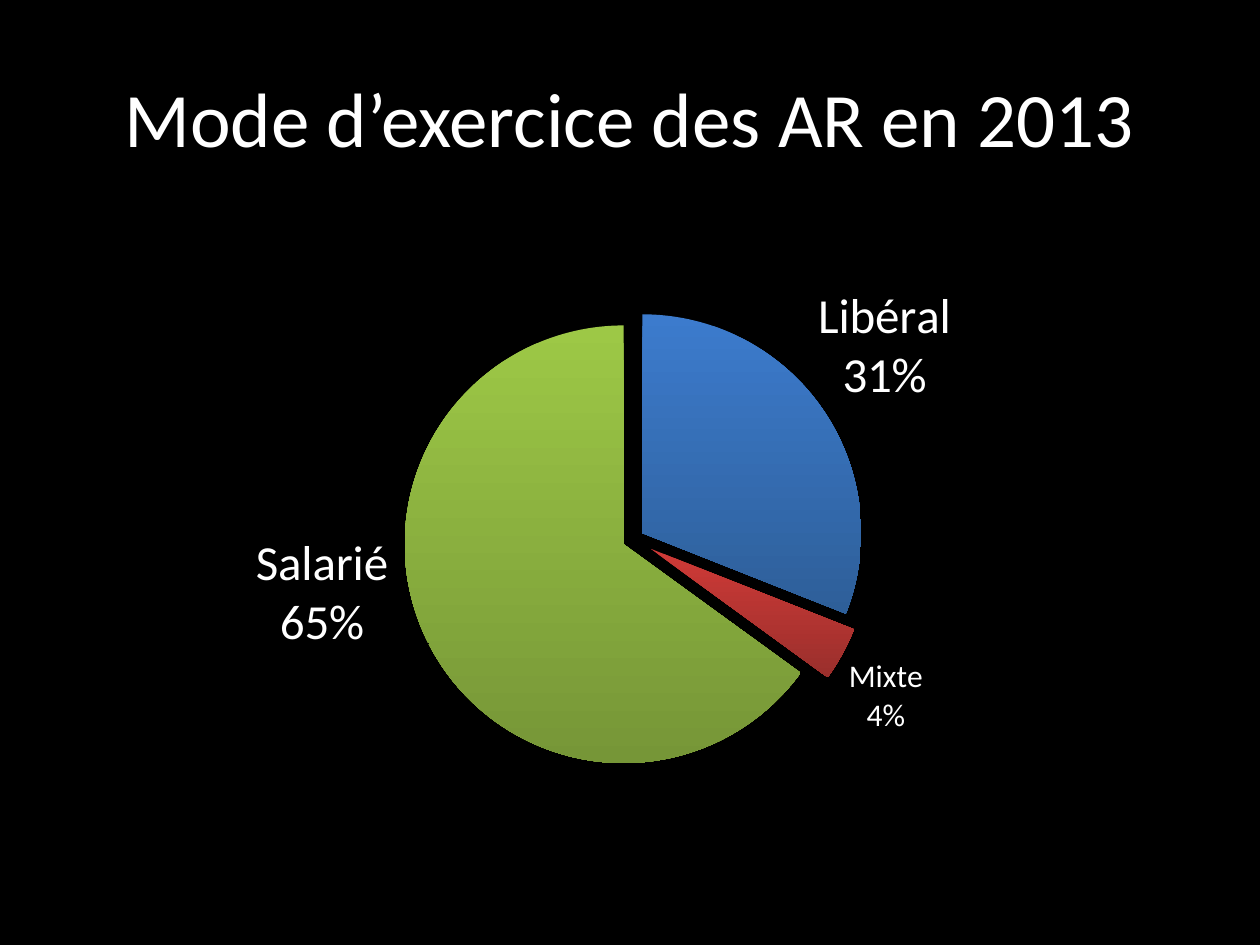
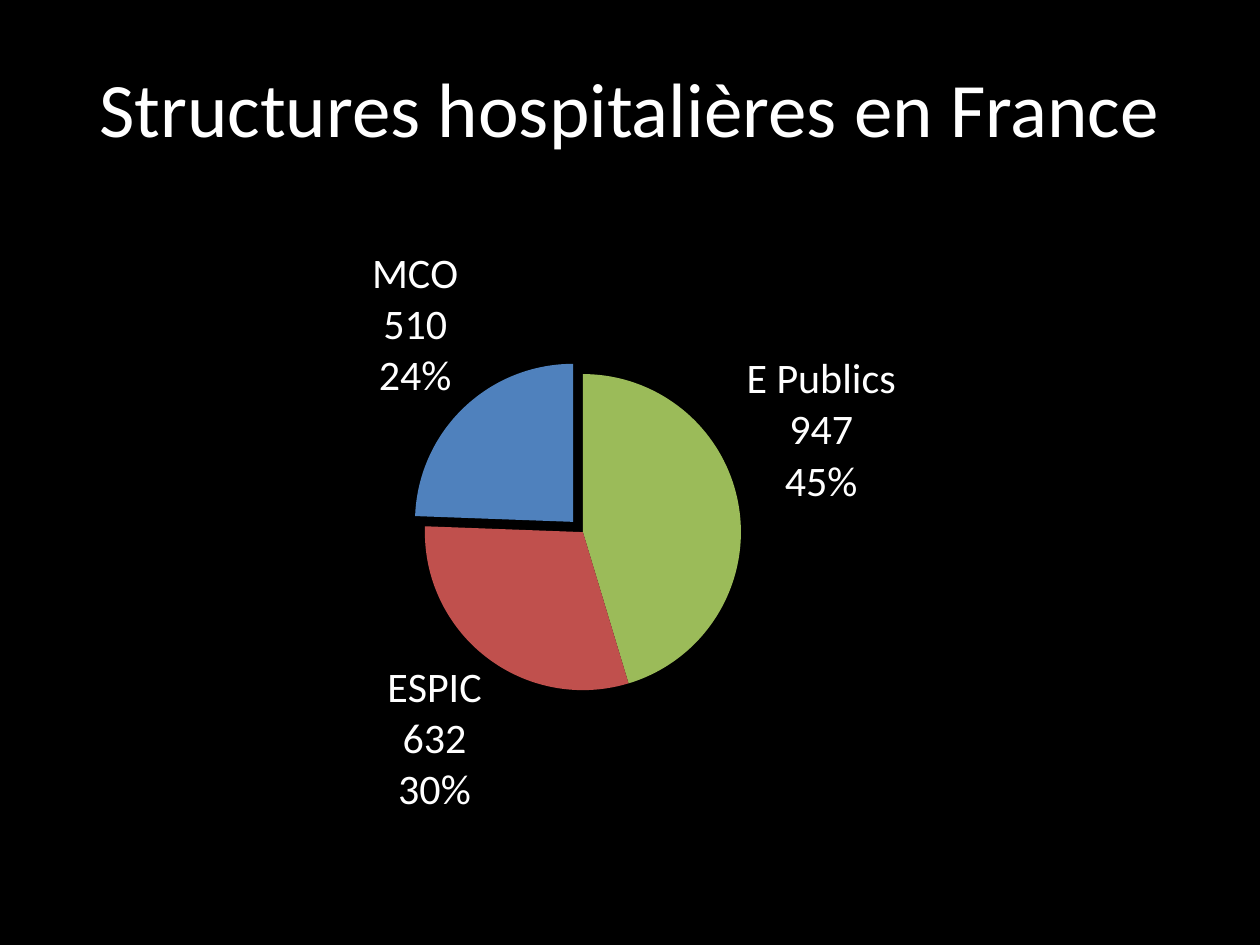
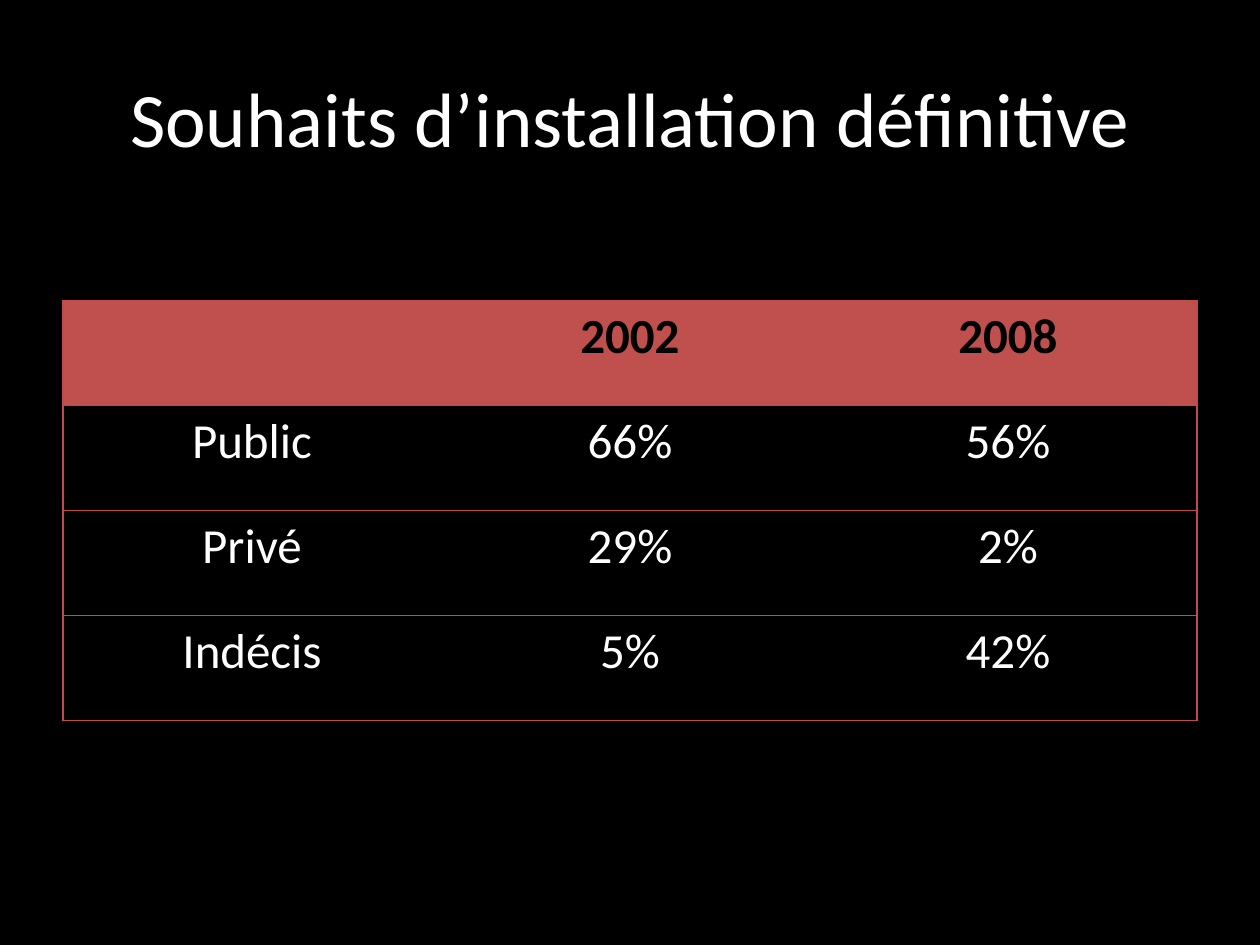
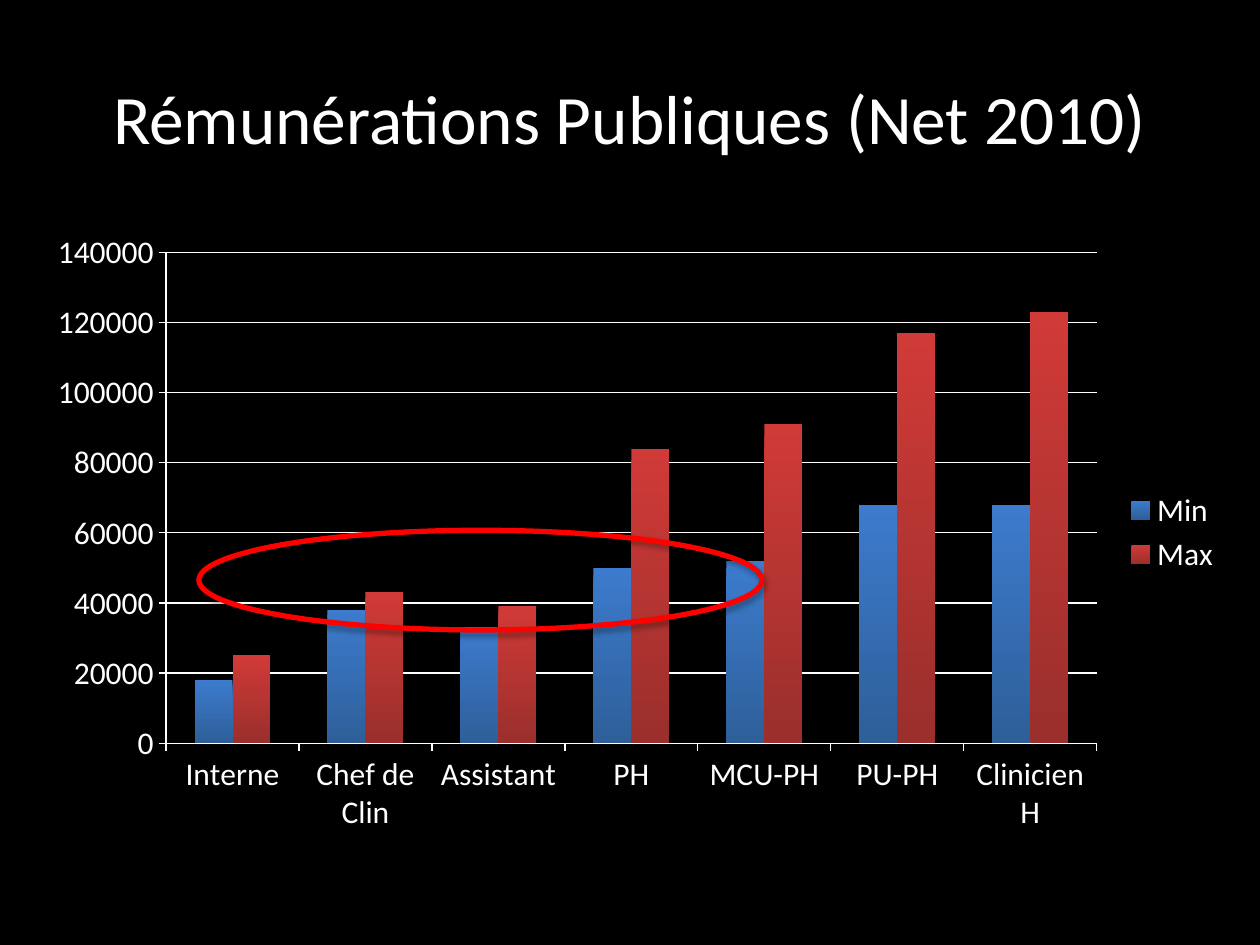
from dataclasses import dataclass
from typing import Any, Optional

from pptx import Presentation
from pptx.chart.data import CategoryChartData
from pptx.dml.color import RGBColor
from pptx.enum.chart import XL_CHART_TYPE, XL_LABEL_POSITION, XL_LEGEND_POSITION, XL_TICK_MARK
from pptx.enum.shapes import MSO_SHAPE
from pptx.enum.text import MSO_ANCHOR, MSO_AUTO_SIZE, PP_ALIGN
from pptx.oxml import parse_xml
from pptx.oxml.ns import nsdecls, qn
from pptx.util import Cm, Pt

PIE, COLUMNS = XL_CHART_TYPE.PIE, XL_CHART_TYPE.COLUMN_CLUSTERED
OUTSIDE_END = XL_LABEL_POSITION.OUTSIDE_END
RIGHT = XL_LEGEND_POSITION.RIGHT
TICK_OUT = XL_TICK_MARK.OUTSIDE
ELLIPSE = MSO_SHAPE.OVAL
CENTER = PP_ALIGN.CENTER
MIDDLE, TOP = MSO_ANCHOR.MIDDLE, MSO_ANCHOR.TOP
NO_AUTOFIT = MSO_AUTO_SIZE.NONE


@dataclass(frozen=True)
class Theme:
    font: str = "Calibri"
    background: str = "000000"
    text: str = "FFFFFF"
    blue: str = "4F81BD"
    red: str = "C0504D"
    green: str = "9BBB59"
    border: str = "BF4C48"
    highlight: str = "FF0000"
    blue_shades: tuple[str, str] = ("3C7BCD", "2E5F99")
    red_shades: tuple[str, str] = ("D03A37", "9A2F2C")
    green_shades: tuple[str, str] = ("9DC846", "769637")
    title_size: float = 44
    long_title_size: float = 39.6
    large_size: float = 28
    label_size: float = 24
    small_size: float = 18
    hairline: float = 0.75
    highlight_line: float = 3


THEME = Theme()


@dataclass(frozen=True)
class Box:
    left: float
    top: float
    width: float
    height: float

    def lengths(self) -> tuple[Cm, Cm, Cm, Cm]:
        return Cm(self.left), Cm(self.top), Cm(self.width), Cm(self.height)


@dataclass(frozen=True)
class Slice:
    category: str
    value: int
    colours: tuple[str, ...]
    label_size: float = THEME.label_size
    explosion: int = 0
    label_shift: Optional[tuple[float, float]] = None  # percent of the chart area


@dataclass(frozen=True)
class PieSlide:
    title: str
    title_box: Box
    plot: Box  # percent of the chart area
    slices: tuple[Slice, ...]
    show_value: bool = False


@dataclass(frozen=True)
class SalarySeries:
    name: str
    values: tuple[int, ...]
    shades: tuple[str, str]


TITLE_BOX = Box(1.27, 0.76, 22.86, 3.17)
PIE_BOX = Box(1.27, 4.45, 22.86, 12.57)

PRACTICE_MODE = PieSlide(
    "Mode d’exercice des AR en 2013", TITLE_BOX, Box(30.9, 16, 38.8, 70.2),
    (
        Slice("Libéral", 31, THEME.blue_shades, THEME.large_size, 5, (-1, 0)),
        Slice("Mixte", 4, THEME.red_shades, THEME.small_size, 9),
        Slice("Salarié", 65, THEME.green_shades, THEME.large_size, 5, (-3, -18)),
    ),
)
HOSPITALS = PieSlide(
    "Structures hospitalières en France", Box(1.27, 0.76, 22.86, 2.79),
    Box(31.9, 24.6, 27.9, 50.7),
    (
        Slice("E Publics", 947, (THEME.green,)),
        Slice("ESPIC", 632, (THEME.red,)),
        Slice("MCO", 510, (THEME.blue,), explosion=9),
    ),
    show_value=True,
)

WISHES_TITLE = "Souhaits d’installation définitive"
WISHES_BOX = Box(1.27, 6.05, 22.86, 8.47)
WISHES = (
    ("", "2002", "2008"),
    ("Public", "66%", "56%"),
    ("Privé", "29%", "2%"),
    ("Indécis", "5%", "42%"),
)

SALARY_TITLE = "Rémunérations Publiques (Net 2010)"
SALARY_BOX = Box(0.66, 4.45, 24.21, 12.57)
SALARY_PLOT = Box(11.1, 5.1, 77.5, 78.7)  # percent of the chart area
GRADES = ("Interne", "Chef de Clin", "Assistant", "PH", "MCU-PH", "PU-PH", "Clinicien H")
SALARIES = (
    SalarySeries("Min", (18000, 38000, 33000, 50000, 52000, 68000, 68000), THEME.blue_shades),
    SalarySeries("Max", (25000, 43000, 39000, 84000, 91000, 117000, 123000), THEME.red_shades),
)
HIGHLIGHT_BOX = Box(4.01, 10.69, 11.35, 2.01)


# Shared formatting
def rgb(colour: str) -> RGBColor:
    return RGBColor.from_string(colour)


def apply(target: Any, values: dict[str, Any]) -> None:
    for attribute, value in values.items():
        setattr(target, attribute, value)


def style_font(font: Any, size: float, colour: str = THEME.text, bold: bool = False) -> None:
    apply(font, {"name": THEME.font, "size": Pt(size), "bold": bold})
    font.color.rgb = rgb(colour)


def fill_shades(fill: Any, colours: tuple[str, ...]) -> None:
    """Fill plainly with one colour, or from top to bottom with two."""
    if len(colours) == 1:
        fill.solid()
        fill.fore_color.rgb = rgb(colours[0])
        return
    fill.gradient()
    fill.gradient_angle = 270
    for stop, colour in zip(fill.gradient_stops, colours):
        stop.color.rgb = rgb(colour)


def add_titled_slide(prs: Any, title: str, box: Box = TITLE_BOX,
                     size: float = THEME.title_size) -> Any:
    slide = prs.slides.add_slide(prs.slide_layouts[5])
    heading = slide.shapes.title
    apply(heading, dict(zip(("left", "top", "width", "height"), box.lengths())))
    frame = heading.text_frame
    frame.text = title
    apply(frame, {"word_wrap": True, "auto_size": NO_AUTOFIT, "vertical_anchor": MIDDLE})
    paragraph = frame.paragraphs[0]
    paragraph.alignment = CENTER
    style_font(paragraph.runs[0].font, size)
    return slide


# Chart helpers
def manual_layout(percents: dict[str, float], inner: bool = False) -> Any:
    entries = ""
    if inner:
        entries = ('<c:layoutTarget val="inner"/>'
                   '<c:xMode val="edge"/><c:yMode val="edge"/>')
    entries += "".join(f'<c:{key} val="{percent / 100:.3f}"/>'
                       for key, percent in percents.items())
    return parse_xml(f'<c:layout {nsdecls("c")}><c:manualLayout>{entries}'
                     "</c:manualLayout></c:layout>")


def add_chart(slide: Any, kind: Any, box: Box, plot: Box, data: CategoryChartData) -> Any:
    chart = slide.shapes.add_chart(kind, *box.lengths(), data).chart
    apply(chart, {"has_title": False, "has_legend": False})
    style_font(chart.font, THEME.small_size)
    plot_area = chart._chartSpace.xpath("c:chart/c:plotArea")[0]
    for automatic in plot_area.findall(qn("c:layout")):
        plot_area.remove(automatic)
    bounds = {"x": plot.left, "y": plot.top, "w": plot.width, "h": plot.height}
    plot_area.insert(0, manual_layout(bounds, inner=True))
    return chart


def style_slice(series: Any, index: int, part: Slice, show_value: bool) -> None:
    point = series.points[index]
    fill_shades(point.format.fill, part.colours)
    point.format.line.fill.background()
    if part.explosion:
        shape_format = series._element.xpath(f"c:dPt[c:idx/@val={index}]/c:spPr")[0]
        shape_format.addprevious(
            parse_xml(f'<c:explosion {nsdecls("c")} val="{part.explosion}"/>'))

    # Label content, line breaks and shift
    style_font(point.data_label.font, part.label_size)
    point.data_label.position = OUTSIDE_END
    label = series._element.xpath(f"c:dLbls/c:dLbl[c:idx/@val={index}]")[0]
    shown = {"showVal": show_value, "showCatName": True, "showPercent": True}
    for tag, visible in shown.items():
        label.find(qn(f"c:{tag}")).set("val", str(int(visible)))
    label.append(parse_xml(f'<c:separator {nsdecls("c")}>\n</c:separator>'))
    if part.label_shift:
        shift = dict(zip("xy", part.label_shift))
        label.find(qn("c:idx")).addnext(manual_layout(shift))


def build_pie_slide(prs: Any, content: PieSlide) -> None:
    slide = add_titled_slide(prs, content.title, content.title_box)
    data = CategoryChartData()
    data.categories = [part.category for part in content.slices]
    data.add_series("Series 1", [part.value for part in content.slices])
    chart = add_chart(slide, PIE, PIE_BOX, content.plot, data)
    chart.plots[0].vary_by_categories = True
    for index, part in enumerate(content.slices):
        style_slice(chart.plots[0].series[0], index, part, content.show_value)


# Table of wishes
def set_borders(cell: Any, visible: dict[str, bool]) -> None:
    properties = cell._tc.get_or_add_tcPr()
    for side, drawn in visible.items():
        paint = (f'<a:solidFill><a:srgbClr val="{THEME.border}"/></a:solidFill>'
                 if drawn else "<a:noFill/>")
        properties.append(parse_xml(
            f'<a:ln{side} {nsdecls("a")} w="{Pt(THEME.hairline)}">{paint}</a:ln{side}>'))


def build_wishes_slide(prs: Any) -> None:
    slide = add_titled_slide(prs, WISHES_TITLE)
    row_count, column_count = len(WISHES), len(WISHES[0])
    table = slide.shapes.add_table(row_count, column_count, *WISHES_BOX.lengths()).table
    table.horz_banding = False
    for row, answers in enumerate(WISHES):
        for column, answer in enumerate(answers):
            cell = table.cell(row, column)
            header = row == 0
            set_borders(cell, {"L": column == 0, "R": column == column_count - 1,
                               "T": True, "B": True})
            if header:
                fill_shades(cell.fill, (THEME.red,))
            else:
                cell.fill.background()
            cell.vertical_anchor = TOP
            paragraph = cell.text_frame.paragraphs[0]
            paragraph.text = answer
            paragraph.alignment = CENTER
            colour = THEME.background if header else THEME.text
            for target in (paragraph, *paragraph.runs):
                style_font(target.font, THEME.large_size, colour, header)


# Salary columns with the highlighted range
def add_highlight(slide: Any) -> None:
    ring = slide.shapes.add_shape(ELLIPSE, *HIGHLIGHT_BOX.lengths())
    ring.fill.background()
    ring.line.color.rgb = rgb(THEME.highlight)
    ring.line.width = Pt(THEME.highlight_line)
    ring.shadow.inherit = False
    ring._element.spPr.find(qn("a:effectLst")).append(parse_xml(
        f'<a:outerShdw {nsdecls("a")} blurRad="40000" dist="23000" dir="5400000" '
        'rotWithShape="0"><a:srgbClr val="000000"><a:alpha val="35000"/>'
        "</a:srgbClr></a:outerShdw>"))


def build_salary_slide(prs: Any) -> None:
    slide = add_titled_slide(prs, SALARY_TITLE, size=THEME.long_title_size)
    data = CategoryChartData()
    data.categories = GRADES
    for salary in SALARIES:
        data.add_series(salary.name, salary.values)
    chart = add_chart(slide, COLUMNS, SALARY_BOX, SALARY_PLOT, data)
    apply(chart.plots[0], {"gap_width": 150, "overlap": 0, "vary_by_categories": False})
    for series, salary in zip(chart.plots[0].series, SALARIES):
        fill_shades(series.format.fill, salary.shades)

    amounts, grades = chart.value_axis, chart.category_axis
    apply(amounts, {"minimum_scale": 0, "maximum_scale": 140000, "major_unit": 20000,
                    "has_major_gridlines": True})
    for axis in (amounts, grades):
        axis.major_tick_mark = TICK_OUT
        style_font(axis.tick_labels.font, THEME.small_size)
    for part in (amounts, grades, amounts.major_gridlines):
        part.format.line.color.rgb = rgb(THEME.text)
        part.format.line.width = Pt(THEME.hairline)

    chart.has_legend = True
    apply(chart.legend, {"position": RIGHT, "include_in_layout": False})
    style_font(chart.legend.font, THEME.small_size)
    add_highlight(slide)


def main() -> None:
    prs = Presentation()
    apply(prs, {"slide_width": Cm(25.4), "slide_height": Cm(19.05)})
    fill_shades(prs.slide_master.background.fill, (THEME.background,))
    build_pie_slide(prs, PRACTICE_MODE)
    build_pie_slide(prs, HOSPITALS)
    build_wishes_slide(prs)
    build_salary_slide(prs)
    prs.save("out.pptx")


if __name__ == "__main__":
    main()
